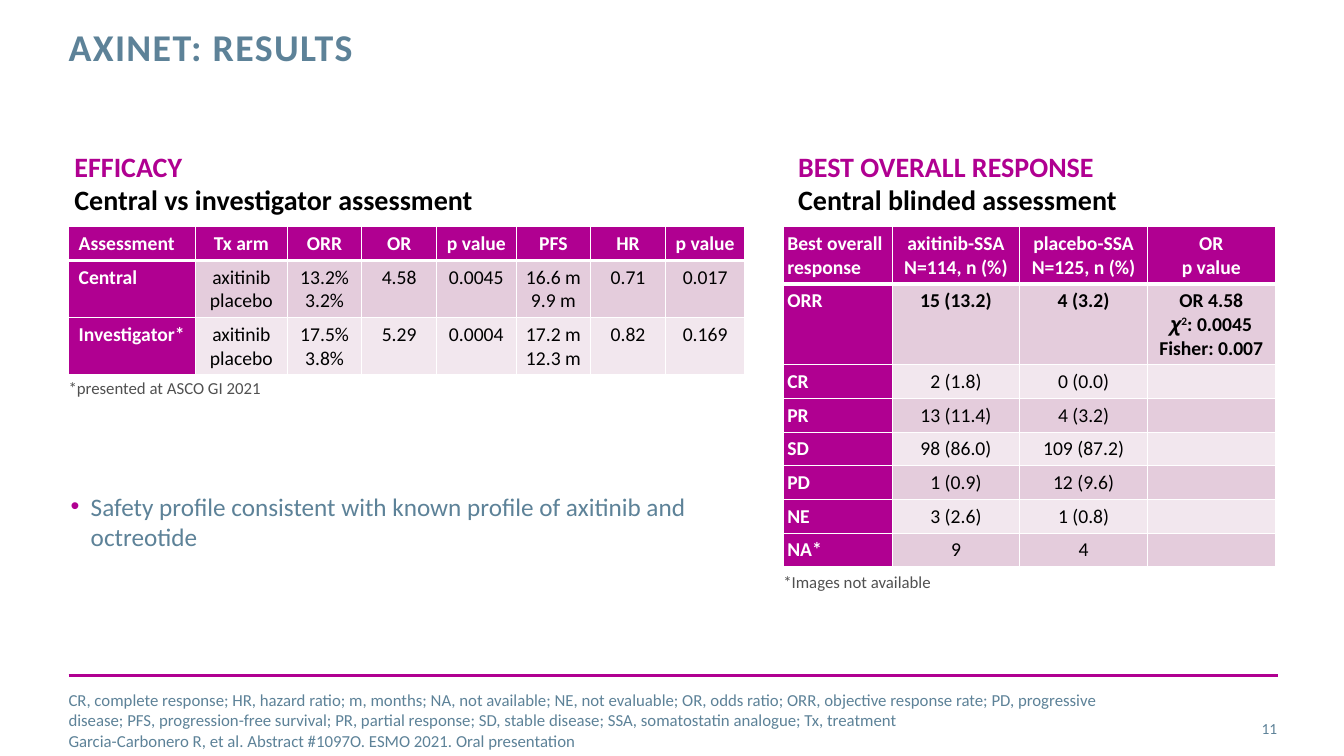
from dataclasses import dataclass, field
from typing import Any

from lxml.etree import SubElement
from pptx import Presentation
from pptx.dml.color import RGBColor
from pptx.enum.shapes import MSO_CONNECTOR
from pptx.enum.text import MSO_ANCHOR as Anchor, MSO_AUTO_SIZE as AutoSize, PP_ALIGN as Align
from pptx.oxml.ns import qn
from pptx.util import Emu, Inches, Pt

MAGENTA = RGBColor(0xB0, 0x00, 0x91)
SLATE = RGBColor(0x5D, 0x82, 0x98)
GREY = RGBColor(0x50, 0x50, 0x50)
BLACK = RGBColor(0x00, 0x00, 0x00)
WHITE = RGBColor(0xFF, 0xFF, 0xFF)
BANDS = (RGBColor(0xE4, 0xCC, 0xDC), RGBColor(0xF2, 0xE7, 0xEE))

WIDTH, HEIGHT = Inches(13.33), Inches(7.5)
LEFT, RIGHT = 5.1, 58.28  # left edges of the two halves, % of the width
TABLE_TOP = 30            # % of the height
ONE, TWO, THREE = 4.45, 7.55, 10.7  # table rows by line count, % of the height
FONT = "Calibri"


def across(percent: float) -> Emu:
    return Emu(round(WIDTH * percent / 100))


def down(percent: float) -> Emu:
    return Emu(round(HEIGHT * percent / 100))


@dataclass
class Run:
    text: str
    size: float
    colour: RGBColor
    bold: bool = False
    italic: bool = False
    baseline: int = 0


@dataclass
class Block:
    """Text block; its place is in % of the slide's width and height."""
    place: tuple[float, float, float, float]
    lines: list[Run]
    margins: tuple[float, float, float, float] = (0, 0, 0, 0)
    format: dict[str, Any] = field(default_factory=dict)
    align: Align = Align.LEFT


@dataclass
class Grid:
    """Table with a header row, a label column and banded values."""
    left: float
    columns: list[float]
    rows: list[float]
    cells: list[list[str]]
    side_margins: list[float]
    bold_rows: tuple[int, ...] = (0,)


def add_run(paragraph, run: Run) -> None:
    piece = paragraph.add_run()
    piece.text = run.text
    formats = {"name": FONT, "size": Pt(run.size), "bold": run.bold, "italic": run.italic}
    for name, value in formats.items():
        setattr(piece.font, name, value)
    piece.font.color.rgb = run.colour
    if run.baseline:
        piece.font._element.set("baseline", str(run.baseline * 1000))


def fill_block(shape, block: Block) -> None:
    left, top, width, height = block.place
    shape.left, shape.top = across(left), down(top)
    shape.width, shape.height = across(width), down(height)
    frame = shape.text_frame
    sides = ("margin_left", "margin_top", "margin_right", "margin_bottom")
    formats = dict(zip(sides, map(Inches, block.margins)))
    formats |= {"word_wrap": True, "auto_size": AutoSize.NONE, "vertical_anchor": Anchor.TOP}
    for name, value in (formats | block.format).items():
        setattr(frame, name, value)
    for index, line in enumerate(block.lines):
        paragraph = frame.add_paragraph() if index else frame.paragraphs[0]
        paragraph.alignment = block.align
        for part, text in enumerate(line.text.split("\v")):
            if part:
                paragraph.add_line_break()
            add_run(paragraph, Run(text, line.size, line.colour, line.bold))


def add_block(slide, block: Block):
    box = slide.shapes.add_textbox(0, 0, 0, 0)
    fill_block(box, block)
    return box


def add_borders(cell, row: int) -> None:
    properties = cell._tc.get_or_add_tcPr()
    points = {"L": 1, "R": 1, "T": 3 if row == 1 else 1, "B": 3 if row == 0 else 1}
    for side, width in points.items():
        edge = SubElement(properties, qn(f"a:ln{side}"), w=str(Pt(width)))
        SubElement(SubElement(edge, qn("a:solidFill")), qn("a:srgbClr"), val=str(WHITE))


def fill_cell(cell, text: str, row: int, column: int, bold: bool, margin: float) -> None:
    heading = row == 0 or column == 0
    add_borders(cell, row)
    cell.fill.solid()
    cell.fill.fore_color.rgb = MAGENTA if heading else BANDS[(row - 1) % 2]
    cell.margin_left = cell.margin_right = Inches(margin)
    cell.margin_top = cell.margin_bottom = Inches(0.05)
    colour = WHITE if heading else BLACK
    for index, line in enumerate(text.split("\n")):
        paragraph = cell.text_frame.add_paragraph() if index else cell.text_frame.paragraphs[0]
        paragraph.alignment = Align.CENTER if column else Align.LEFT
        if not line:
            SubElement(paragraph._p, qn("a:endParaRPr"), sz="1400")
        elif line.startswith("ꭓ²"):
            add_run(paragraph, Run("ꭓ", 14, colour, bold, italic=True))
            add_run(paragraph, Run("2", 14, colour, bold, baseline=30))
            add_run(paragraph, Run(line[2:], 14, colour, bold))
        else:
            add_run(paragraph, Run(line, 14, colour, bold))


def add_grid(slide, grid: Grid) -> None:
    table = slide.shapes.add_table(
        len(grid.rows), len(grid.columns), across(grid.left), down(TABLE_TOP),
        across(sum(grid.columns)), down(sum(grid.rows))).table
    for column, width in zip(table.columns, grid.columns):
        column.width = across(width)
    for row, height in zip(table.rows, grid.rows):
        row.height = down(height)
    for r, values in enumerate(grid.cells):
        for c, text in enumerate(values):
            bold = c == 0 or r in grid.bold_rows
            fill_cell(table.cell(r, c), text, r, c, bold, grid.side_margins[c])


EFFICACY = Grid(
    LEFT, [9.45, 6.83, 5.55, 5.55, 5.93, 5.55, 5.55, 5.93], [ONE, TWO, TWO],
    [["Assessment", "Tx arm", "ORR", "OR", "p value", "PFS", "HR", "p value"],
     ["Central", "axitinib\nplacebo", "13.2%\n3.2%", "4.58", "0.0045",
      "16.6 m\n9.9 m", "0.71", "0.017"],
     ["Investigator*", "axitinib\nplacebo", "17.5%\n3.8%", "5.29", "0.0004",
      "17.2 m\n12.3 m", "0.82", "0.169"]],
    [0.1] * 2 + [0] * 6)

RESPONSE = Grid(
    RIGHT, [8.1] + [9.5] * 3, [TWO, THREE] + [ONE] * 6,
    [["Best overall response", "axitinib-SSA\nN=114, n (%)",
      "placebo-SSA\nN=125, n (%)", "OR\np value"],
     ["ORR", "15 (13.2)", "4 (3.2)", "OR 4.58\nꭓ²: 0.0045\nFisher: 0.007"],
     ["CR", "2 (1.8)", "0 (0.0)", ""],
     ["PR", "13 (11.4)", "4 (3.2)", ""],
     ["SD", "98 (86.0)", "109 (87.2)", ""],
     ["PD", "1 (0.9)", "12 (9.6)", ""],
     ["NE", "3 (2.6)", "1 (0.8)", ""],
     ["NA*", "9", "4", ""]],
    [0.04] * 4, bold_rows=(0, 1))

TITLE = Block((LEFT, 3.6, 71.7, 11.73), [Run("AXINET: RESULTS", 27, SLATE, True)])
SAFETY = Block((5.25, 64.93, 50.33, 12.4), [
    Run("Safety profile consistent with known profile of axitinib and octreotide", 18, SLATE)])
ABBREVIATIONS = (
    "CR, complete response; HR, hazard ratio; m, months; NA, not available; NE, not evaluable; "
    "OR, odds ratio; ORR, objective response rate; PD, progressive disease; "
    "PFS, progression-free survival; PR, partial response; SD, stable disease; "
    "SSA, somatostatin analogue; Tx, treatment")
REFERENCE = "Garcia-Carbonero R, et al. Abstract #1097O. ESMO 2021. Oral presentation"

MIDDLE = {"vertical_anchor": Anchor.MIDDLE}
UNWRAPPED = {"word_wrap": False, "auto_size": AutoSize.SHAPE_TO_FIT_TEXT}
HEADING_MARGINS, NOTE_MARGINS = (0.1, 0.05, 0.1, 0.05), (0, 0.05, 0.1, 0.05)
BLOCKS = [
    Block((88.58, 93.73, 6.45, 5.33), [Run("11", 11, SLATE)], format=MIDDLE, align=Align.RIGHT),
    Block((LEFT, 92.4, 76.88, 5.73), [Run(f"{ABBREVIATIONS}\v{REFERENCE}", 12, SLATE)],
          format=MIDDLE),
    Block((LEFT, 49.33, 17.48, 4), [Run("*presented at ASCO GI 2021", 12, GREY)], NOTE_MARGINS),
    Block((RIGHT, 74.93, 13.35, 4), [Run("*Images not available", 12, GREY)], NOTE_MARGINS),
    Block((4.8, 19.07, 31.43, 10.27),
          [Run("EFFICACY", 20, MAGENTA, True),
           Run("Central vs investigator assessment", 20, BLACK, True)],
          HEADING_MARGINS, UNWRAPPED),
    Block((58.65, 19.07, 25.43, 10.27),
          [Run("BEST OVERALL RESPONSE", 20, MAGENTA, True),
           Run("Central blinded assessment", 20, BLACK, True)],
          HEADING_MARGINS, UNWRAPPED),
]


def main() -> None:
    deck = Presentation()
    deck.slide_width, deck.slide_height = WIDTH, HEIGHT
    slide = deck.slides.add_slide(deck.slide_layouts[5])

    # Title
    title = slide.shapes.title
    fill_block(title, TITLE)
    heading = title.text_frame.paragraphs[0]
    heading.line_spacing = Pt(30)
    heading.runs[0].font._element.set("spc", "100")

    # Footer rule
    rule = slide.shapes.add_connector(
        MSO_CONNECTOR.STRAIGHT, across(LEFT), down(89.33), across(95.1), down(89.33))
    rule.line.color.rgb = MAGENTA
    rule.line.width = Pt(2)
    SubElement(rule._element.spPr, qn("a:effectLst"))

    # Safety bullet
    safety = add_block(slide, SAFETY).text_frame.paragraphs[0]
    bullet = safety._p.get_or_add_pPr()
    bullet.set("marL", str(Inches(0.2)))
    bullet.set("indent", str(-Inches(0.2)))
    SubElement(SubElement(bullet, qn("a:buClr")), qn("a:srgbClr"), val=str(MAGENTA))
    SubElement(bullet, qn("a:buFont"), typeface="Arial")
    SubElement(bullet, qn("a:buChar"), char="•")

    # Headings, notes, footer and tables
    for block in BLOCKS:
        add_block(slide, block)
    for grid in (EFFICACY, RESPONSE):
        add_grid(slide, grid)

    deck.save("out.pptx")


if __name__ == "__main__":
    main()
